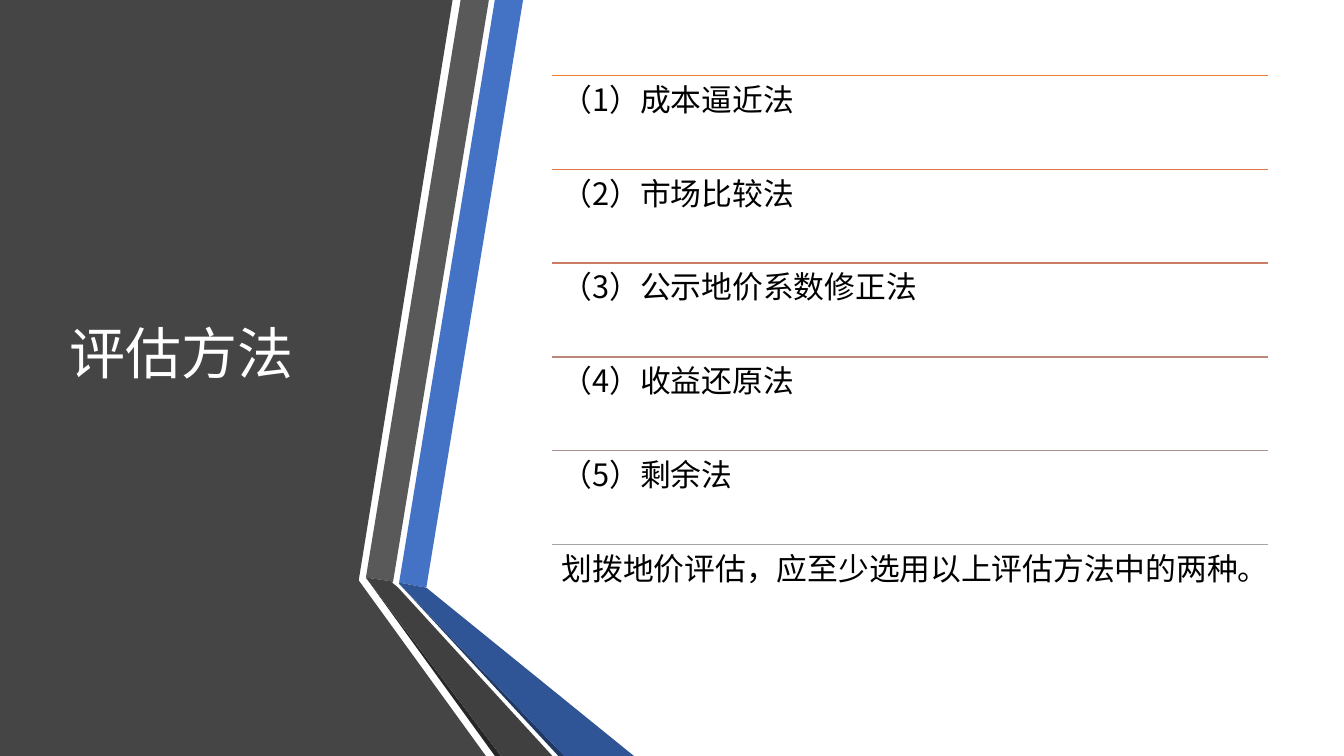
from lxml.etree import SubElement
from pptx import Presentation
from pptx.dml.color import RGBColor
from pptx.enum.shapes import MSO_CONNECTOR as Connector
from pptx.enum.text import MSO_ANCHOR as Anchor
from pptx.oxml.ns import qn
from pptx.util import Pt

FONT = "Noto Sans CJK SC"
BANDS = [
    ("454545", [(0, 0), (323.28, 0), (256.32, 414), (256.32, 414.72), (347.04, 540), (0, 540)]),
    ("4472C4", [(285.12, 416.16), (304.56, 419.76), (373.68, 0), (353.52, 0)]),
    ("595959", [(349.2, 0), (329.04, 0), (261.36, 412.56), (280.8, 415.44)]),
    ("262626", [(261.36, 412.56), (353.52, 540), (357.84, 540)]),
    ("203864", [(285.12, 416.88), (398.88, 540), (403.2, 540)]),
    ("2F5597", [(285.12, 416.88), (403.2, 540), (452.88, 540), (304.56, 419.76), (285.12, 416.16)]),
    ("404040", [(394.56, 540), (284.4, 419.76), (280.08, 416.16), (280.8, 415.44),
                (261.36, 412.56), (357.84, 540)]),
]
METHODS = [
    ("（1）成本逼近法", "ED7D31"),
    ("（2）市场比较法", "DC7A4B"),
    ("（3）公示地价系数修正法", "CC7D64"),
    ("（4）收益还原法", "BD867B"),
    ("（5）剩余法", "B09391"),
    ("划拨地价评估，应至少选用以上评估方法中的两种。", "A5A5A5"),
]
LIST_LEFT, LIST_TOP, LIST_WIDTH, ROW_HEIGHT = 394.56, 54, 511.2, 66.96


def color(value):
    """Turn a hex string into a colour."""
    return RGBColor.from_string(value)


def apply(target, values):
    """Set attributes from a dict of format values."""
    for name, value in values.items():
        setattr(target, name, value)


def add_band(page, fill, corners):
    """Draw a filled polygon through the corners."""
    points = [(Pt(x), Pt(y)) for x, y in corners]
    builder = page.shapes.build_freeform(*points[0], scale=1.0)
    builder.add_line_segments(points[1:], close=True)
    band = builder.convert_to_shape()
    band.shadow.inherit = False
    band.fill.solid()
    band.fill.fore_color.rgb = color(fill)
    band.line.fill.background()


def add_text(page, frame, text, size, fill, layout):
    """Add a wrapped text box with one paragraph."""
    box = page.shapes.add_textbox(*map(Pt, frame))
    apply(box.text_frame, {"word_wrap": True, **layout})
    para = box.text_frame.paragraphs[0]
    para.line_spacing = 0.9
    span = para.add_run()
    span.text = text
    span.font.color.rgb = color(fill)
    apply(span.font, {"size": Pt(size), "name": FONT})
    SubElement(span.font._element, qn("a:ea"), typeface=FONT)


def add_rule(page, left, top, width, stroke):
    """Draw a thin horizontal line."""
    rule = page.shapes.add_connector(
        Connector.STRAIGHT, Pt(left), Pt(top), Pt(left + width), Pt(top))
    rule.line.color.rgb = color(stroke)
    rule.line.width = Pt(1)
    SubElement(rule._element.spPr, qn("a:effectLst"))


def main():
    """Build the slide and save it."""
    deck = Presentation()
    apply(deck, {"slide_width": Pt(960), "slide_height": Pt(540)})
    page = deck.slides.add_slide(deck.slide_layouts[6])
    for fill, corners in BANDS:
        add_band(page, fill, corners)
    add_text(page, (42.48, 54, 218.88, 401.76), "评估方法", 40, "FFFFFF",
             {"vertical_anchor": Anchor.MIDDLE})
    sides = ("left", "top", "right", "bottom")
    insets = {f"margin_{side}": Pt(6.6) for side in sides}
    for index, (text, stroke) in enumerate(METHODS):
        top = LIST_TOP + index * ROW_HEIGHT
        add_rule(page, LIST_LEFT, top, LIST_WIDTH, stroke)
        add_text(page, (LIST_LEFT, top, LIST_WIDTH, ROW_HEIGHT), text, 22, "000000",
                 {"vertical_anchor": Anchor.TOP, **insets})
    deck.save("out.pptx")


if __name__ == "__main__":
    main()
